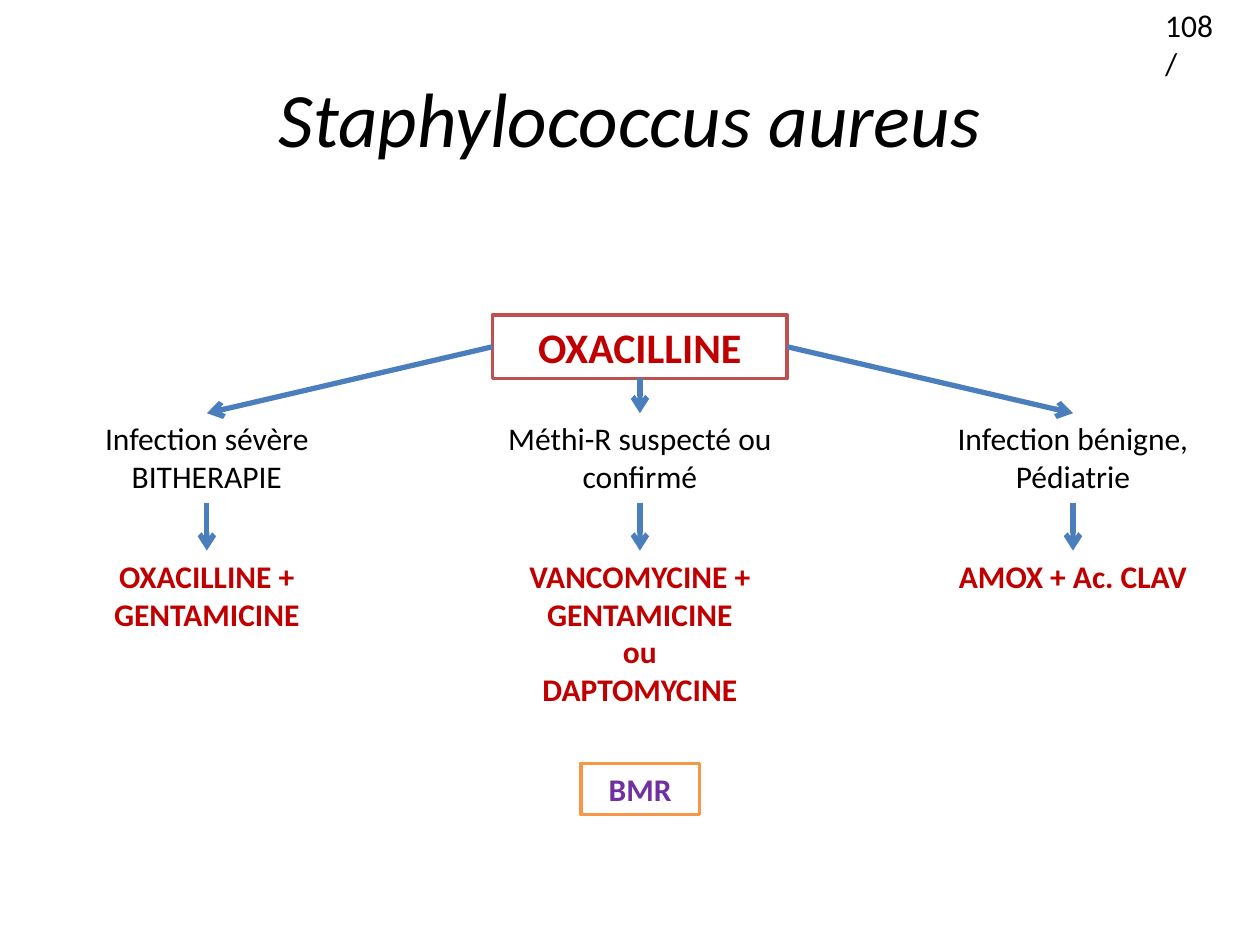
import pptx
import pptx.dml.color
import pptx.enum.shapes
import pptx.enum.text
import pptx.util
from lxml import etree
from pptx.oxml.ns import qn

Cm = pptx.util.Cm
RGBColor = pptx.dml.color.RGBColor

BLACK = RGBColor(0x00, 0x00, 0x00)
WHITE = RGBColor(0xFF, 0xFF, 0xFF)
DRUG_RED = RGBColor(0xC0, 0x00, 0x00)
FRAME_RED = RGBColor(0xC0, 0x50, 0x4D)
FRAME_ORANGE = RGBColor(0xF7, 0x96, 0x46)
PURPLE = RGBColor(0x70, 0x30, 0xA0)
ARROW_BLUE = RGBColor(0x4B, 0x7E, 0xBC)

COLUMN_LEFT, COLUMN_PITCH, COLUMN_WIDTH = 1.2, 8.73, 5.94
CONDITION_TOP, TREATMENT_TOP = 8.33, 11.1
LINE_HEIGHT, BOX_MARGIN = 0.77, 0.26


def write(shape, text, size, color, bold=False, italic=False,
          align=pptx.enum.text.PP_ALIGN.CENTER):
    frame = shape.text_frame
    frame.text = text
    frame.word_wrap = True
    for paragraph in frame.paragraphs:
        paragraph.alignment = align
        for run in paragraph.runs:
            run.font.name = "Calibri"
            run.font.size = pptx.util.Pt(size)
            run.font.bold = bold
            run.font.italic = italic
            run.font.color.rgb = color


def connect(start, start_site, end):
    arrow = slide.shapes.add_connector(
        pptx.enum.shapes.MSO_CONNECTOR.STRAIGHT, 0, 0, 0, 0)
    arrow.begin_connect(start, start_site)
    arrow.end_connect(end, 0)
    arrow.line.color.rgb = ARROW_BLUE
    arrow.line.width = pptx.util.Pt(3)
    etree.SubElement(arrow.line._get_or_add_ln(), qn("a:tailEnd"), type="arrow")
    etree.SubElement(arrow._element.spPr, qn("a:effectLst"))


presentation = pptx.Presentation()
presentation.slide_width = Cm(25.4)
presentation.slide_height = Cm(19.05)
slide = presentation.slides.add_slide(presentation.slide_layouts[5])

# Page number
page_number = slide.shapes.add_textbox(Cm(23.24), Cm(0), Cm(1.52), Cm(1.02))
write(page_number, "108/", 18, BLACK, align=pptx.enum.text.PP_ALIGN.LEFT)

# Title
title = slide.shapes.title
title.left, title.top, title.width, title.height = Cm(1.27), Cm(0.76), Cm(22.86), Cm(3.18)
title.text_frame.vertical_anchor = pptx.enum.text.MSO_ANCHOR.MIDDLE
write(title, "Staphylococcus aureus", 44, BLACK, italic=True)

# Framed labels: first-line drug and resistance warning
framed = []
for text, left, top, width, height, size, color, frame_color in [
    ("OXACILLINE", COLUMN_LEFT + COLUMN_PITCH, 6.35, COLUMN_WIDTH, 1.28, 24, DRUG_RED, FRAME_RED),
    ("BMR", 11.71, 15.39, 2.39, 1.03, 18, PURPLE, FRAME_ORANGE),
]:
    label = slide.shapes.add_shape(
        pptx.enum.shapes.MSO_SHAPE.RECTANGLE, Cm(left), Cm(top), Cm(width), Cm(height))
    label.shadow.inherit = False
    label.fill.solid()
    label.fill.fore_color.rgb = WHITE
    label.line.color.rgb = frame_color
    label.line.width = pptx.util.Pt(2)
    write(label, text, size, color, bold=True)
    framed.append(label)
oxacilline = framed[0]

# Branches: oxacilline -> condition -> treatment
branches = [
    ("Infection sévère\vBITHERAPIE", "OXACILLINE + GENTAMICINE", 2, 1),
    ("Méthi-R suspecté ou confirmé", "VANCOMYCINE + GENTAMICINE\nou\nDAPTOMYCINE", 4, 2),
    ("Infection bénigne,\nPédiatrie", "AMOX + Ac. CLAV", 2, 3),
]
for column, (condition_text, treatment_text, treatment_lines, site) in enumerate(branches):
    left = Cm(COLUMN_LEFT + column * COLUMN_PITCH)
    condition = slide.shapes.add_textbox(
        left, Cm(CONDITION_TOP), Cm(COLUMN_WIDTH), Cm(2 * LINE_HEIGHT + BOX_MARGIN))
    write(condition, condition_text, 18, BLACK)
    treatment = slide.shapes.add_textbox(
        left, Cm(TREATMENT_TOP), Cm(COLUMN_WIDTH),
        Cm(treatment_lines * LINE_HEIGHT + BOX_MARGIN))
    write(treatment, treatment_text, 18, DRUG_RED, bold=True)
    connect(oxacilline, site, condition)
    connect(condition, 2, treatment)

presentation.save("out.pptx")
